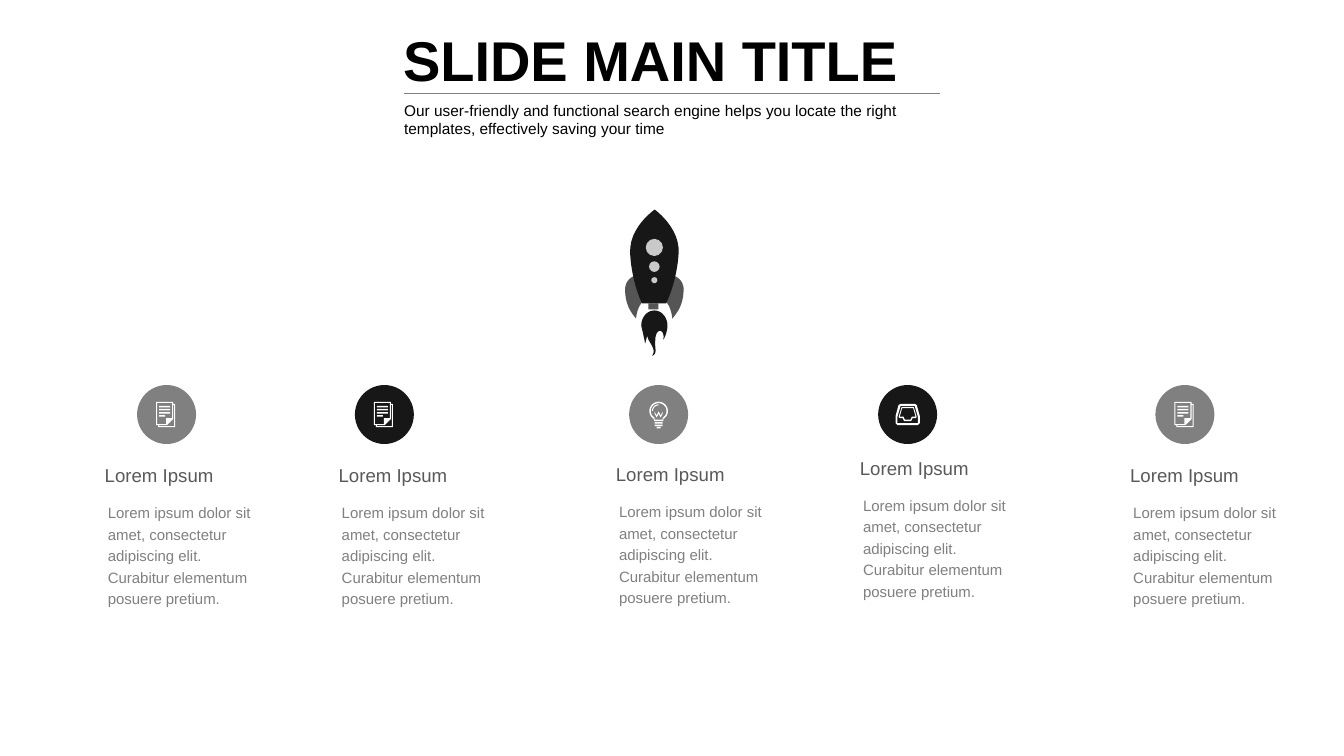
from math import cos, radians, sin
from typing import NamedTuple

from lxml.etree import SubElement
from pptx import Presentation
from pptx.dml.color import RGBColor
from pptx.enum.shapes import MSO_CONNECTOR, MSO_SHAPE
from pptx.enum.text import MSO_AUTO_SIZE, PP_ALIGN
from pptx.oxml.ns import qn
from pptx.util import Inches, Pt

# All lengths are cells of a fine grid, 100 cells to the inch.
CELL = Inches(0.01)
COLUMNS, ROWS = 1333, 750
FONT = "Arial"
BLACK, DARK, GREY, SLATE, WHITE = "000000", "181717", "808080", "595959", "FFFFFF"
BADGE_TOP, BADGE_SIZE = 382, 58.5
BODY_OFFSET = 34  # from the top of a heading to the top of its body text
ROCKET_AXIS, ROCKET_TOP, ROCKET_TILT = 649, 208, 0.4

HEADING = "Lorem Ipsum"
BODY = ("Lorem ipsum dolor sit amet, consectetur adipiscing elit. "
        "Curabitur elementum posuere pretium.")
SUBTITLE = ("Our user-friendly and functional search engine helps you locate "
            "the right templates, effectively saving your time")


def cells(*values):
    return [round(value * CELL) for value in values]


def color(hex_string):
    return RGBColor.from_string(hex_string)


# Contours: lists of points

def box(left, top, right, bottom):
    return [(left, top), (right, top), (right, bottom), (left, bottom)]


def arc(center, radius_x, radius_y, start, end, steps=24):
    """Points from one angle to another, in degrees clockwise from the right."""
    angles = [radians(start + (end - start) * step / steps) for step in range(steps + 1)]
    return [(center[0] + radius_x * cos(angle), center[1] + radius_y * sin(angle))
            for angle in angles]


def curve(start, first_pull, second_pull, end, steps=12):
    """Points of a cubic Bézier curve."""
    points = []
    for t in (step / steps for step in range(steps + 1)):
        weights = (1 - t) ** 3, 3 * t * (1 - t) ** 2, 3 * t ** 2 * (1 - t), t ** 3
        points.append(tuple(sum(weight * value for weight, value in zip(weights, values))
                            for values in zip(start, first_pull, second_pull, end)))
    return points


def mirror(points):
    return [(-x, y) for x, y in points]


def symmetric(right_half):
    return right_half + mirror(right_half)[::-1]


# Icons, measured from the centre of their badge; a contour inside another is a hole

def document_icon():
    left, top, right, bottom = -10.5, -12.5, 6.5, 10.5
    shift, edge, fold = 2, 1, 6
    back_right, back_bottom = right + shift, bottom + shift
    both_sheets = [(left, top), (right, top), (right, top + shift),
                   (back_right, top + shift), (back_right, back_bottom),
                   (left + shift, back_bottom), (left + shift, bottom), (left, bottom)]
    page_right, page_bottom = right - edge, bottom - edge
    front_page = [(left + edge, top + edge), (page_right, top + edge),
                  (page_right, page_bottom - fold), (page_right - fold, page_bottom - fold),
                  (page_right - fold, page_bottom), (left + edge, page_bottom)]
    back_page = [(right, top + shift + edge), (back_right - edge, top + shift + edge),
                 (back_right - edge, back_bottom - edge),
                 (left + shift + edge, back_bottom - edge), (left + shift + edge, bottom),
                 (right - fold, bottom), (right, bottom - fold)]
    text_lines = []
    for row, width in enumerate((11, 11, 11, 6)):
        line_top = top + 4 + 3 * row
        text_lines.append(box(left + 3, line_top, left + 3 + width, line_top + 1.5))
    return [both_sheets, front_page, back_page, *text_lines]


def bulb_icon():
    center = (0, -3.5)

    def glass(radius, foot):
        return symmetric(arc(center, radius, radius, -90, 60) + [(radius / 2, foot)])

    highlight = (arc(center, 6.6, 6.6, 180, 270)
                 + arc(center, 5.6, 5.6, 270, 180))
    zigzag = [(-4 + 2 * index, -1 + 4 * (index % 2)) for index in range(5)]
    filament = zigzag + [(x, y - 2) for x, y in reversed(zigzag)]
    screw_rings = [box(-width / 2, top, width / 2, top + 1.5)
                   for width, top in ((8, 7.5), (8, 10), (4, 12.2))]
    return [glass(9.2, 6.5), glass(7.8, 5), highlight, filament, *screw_rings]


def tray_icon():
    case = [(7, -10.5), (9, -9.5), (12, 1.5), (12, 8.5), (10, 10.5)]
    case_hole = [(7, -8.5), (10.2, 2.5), (10.2, 8.5)]
    inbox = [(6, -7.5), (9, 2.5), (8, 3.5), (5, 3.5), (3.5, 6.5)]
    inbox_hole = [(5.5, -6.3), (7.8, 2), (4.2, 2), (2.8, 5)]
    return [symmetric(half) for half in (case, case_hole, inbox, inbox_hole)]


# Rocket parts, measured from the tip of the nose

def hull():
    nose, shoulder, tail = (0, 0), (24, 44), (12, 93)
    return symmetric(curve(nose, nose, (26, 18), shoulder)
                     + curve(shoulder, shoulder, (23, 70), tail))


def right_fin():
    outer_edge, tip, root = (29, 79), (18, 108), (6, 88)
    return (arc((15.5, 79), 13.5, 14, 180, 360)
            + curve(outer_edge, (29, 90), (26, 99), tip)
            + curve(tip, (17, 98), (13, 90), root))


def flame():
    right_tongue, notch, long_tongue = (9, 129), (1, 130), (-2, 145)
    left_notch, left_tongue = (-7, 125), (-9, 133)
    return (arc((0, 115), 13, 15, 180, 360)
            + curve((13, 115), (13, 120), (11, 126), right_tongue)
            + curve(right_tongue, (11, 118), (1, 116), notch)
            + curve(notch, (0, 136), (4, 143), long_tongue)
            + curve(long_tongue, (3, 138), (-6, 132), left_notch)
            + [left_tongue, (-10, 128)])


# Elements of the slide

def paint(shape, fill, opacity=100, rotation=0):
    shape.shadow.inherit = False
    shape.fill.solid()
    shape.fill.fore_color.rgb = color(fill)
    shape.line.fill.background()
    shape.rotation = rotation
    if opacity < 100:
        rgb = shape.fill._xPr.find(qn("a:solidFill")).find(qn("a:srgbClr"))
        SubElement(rgb, qn("a:alpha")).set("val", str(opacity * 1000))


def add_preset(slide, kind, left, top, width, height, fill, **look):
    shape = slide.shapes.add_shape(kind, *cells(left, top, width, height))
    paint(shape, fill, **look)
    return shape


def add_outline(slide, contours, origin_x, origin_y, fill, **look):
    placed = [[cells(origin_x + x, origin_y + y) for x, y in contour]
              for contour in contours]
    builder = slide.shapes.build_freeform(*placed[0][0])
    for contour in placed:
        builder.move_to(*contour[0])
        builder.add_line_segments(contour[1:], close=True)
    paint(builder.convert_to_shape(), fill, **look)


def add_text(slide, text, left, top, width, height, *, size, fill, bold=False,
             insets=(10, 5), line_spacing=1.0, space_before=0, grow=True):
    frame = slide.shapes.add_textbox(*cells(left, top, width, height)).text_frame
    frame.word_wrap = True
    frame.auto_size = MSO_AUTO_SIZE.SHAPE_TO_FIT_TEXT if grow else MSO_AUTO_SIZE.NONE
    frame.margin_left, frame.margin_top = cells(*insets)
    frame.margin_right, frame.margin_bottom = cells(*insets)
    paragraph = frame.paragraphs[0]
    paragraph.alignment = PP_ALIGN.LEFT
    paragraph.line_spacing = line_spacing
    paragraph.space_before = Pt(space_before)
    run = paragraph.add_run()
    run.text = text
    run.font.name, run.font.size, run.font.bold = FONT, Pt(size), bold
    run.font.color.rgb = color(fill)


def add_rule(slide, left, right, height, stroke):
    connector = slide.shapes.add_connector(
        MSO_CONNECTOR.STRAIGHT, *cells(left, height, right, height))
    connector.line.color.rgb = color(stroke)
    connector.line.width = Pt(1)
    SubElement(connector._element.spPr, qn("a:effectLst"))


def add_rocket(slide):
    fin = right_fin()
    for part, opacity in ((flame(), 100), (mirror(fin), 73), (fin, 73), (hull(), 100)):
        add_outline(slide, [part], ROCKET_AXIS, ROCKET_TOP, DARK,
                    opacity=opacity, rotation=ROCKET_TILT)
    for center, size in ((37.5, 17), (56.5, 10.5), (70, 6)):
        add_preset(slide, MSO_SHAPE.OVAL, ROCKET_AXIS - size / 2,
                   ROCKET_TOP + center - size / 2, size, size, WHITE,
                   opacity=77, rotation=ROCKET_TILT)
    add_preset(slide, MSO_SHAPE.RECTANGLE, ROCKET_AXIS - 6, ROCKET_TOP + 93, 10, 6,
               DARK, opacity=73, rotation=ROCKET_TILT)


class Feature(NamedTuple):
    text_left: float
    text_top: float
    badge_left: float
    badge_color: str
    icon: list


def add_feature(slide, feature):
    left, top = feature.text_left, feature.text_top
    add_text(slide, HEADING, left, top, 169, 33, size=13.3, fill=SLATE)
    add_text(slide, BODY, left, top + BODY_OFFSET, 184, 135, size=10.7, fill=GREY,
             insets=(13, 7), line_spacing=1.2, space_before=2.1, grow=False)
    badge = add_preset(slide, MSO_SHAPE.ROUNDED_RECTANGLE, feature.badge_left, BADGE_TOP,
                       BADGE_SIZE, BADGE_SIZE, feature.badge_color)
    badge.adjustments[0] = 0.5
    add_outline(slide, feature.icon, feature.badge_left + BADGE_SIZE / 2,
                BADGE_TOP + BADGE_SIZE / 2, WHITE)


def main():
    presentation = Presentation()
    presentation.slide_width, presentation.slide_height = cells(COLUMNS, ROWS)
    slide = presentation.slides.add_slide(presentation.slide_layouts[6])
    add_rocket(slide)
    for feature in (Feature(94, 455, 136, GREY, document_icon()),
                    Feature(326, 455, 352, DARK, document_icon()),
                    Feature(601, 454, 624, GREY, bulb_icon()),
                    Feature(843, 448, 871, DARK, tray_icon()),
                    Feature(1111, 455, 1146, GREY, document_icon())):
        add_feature(slide, feature)
    add_text(slide, "SLIDE MAIN TITLE", 390, 20, 553, 78, size=40, fill=BLACK, bold=True)
    add_text(slide, SUBTITLE, 391, 95, 551, 47, size=11, fill=BLACK)
    add_rule(slide, 401, 932, 93, GREY)
    presentation.save("out.pptx")


if __name__ == "__main__":
    main()
